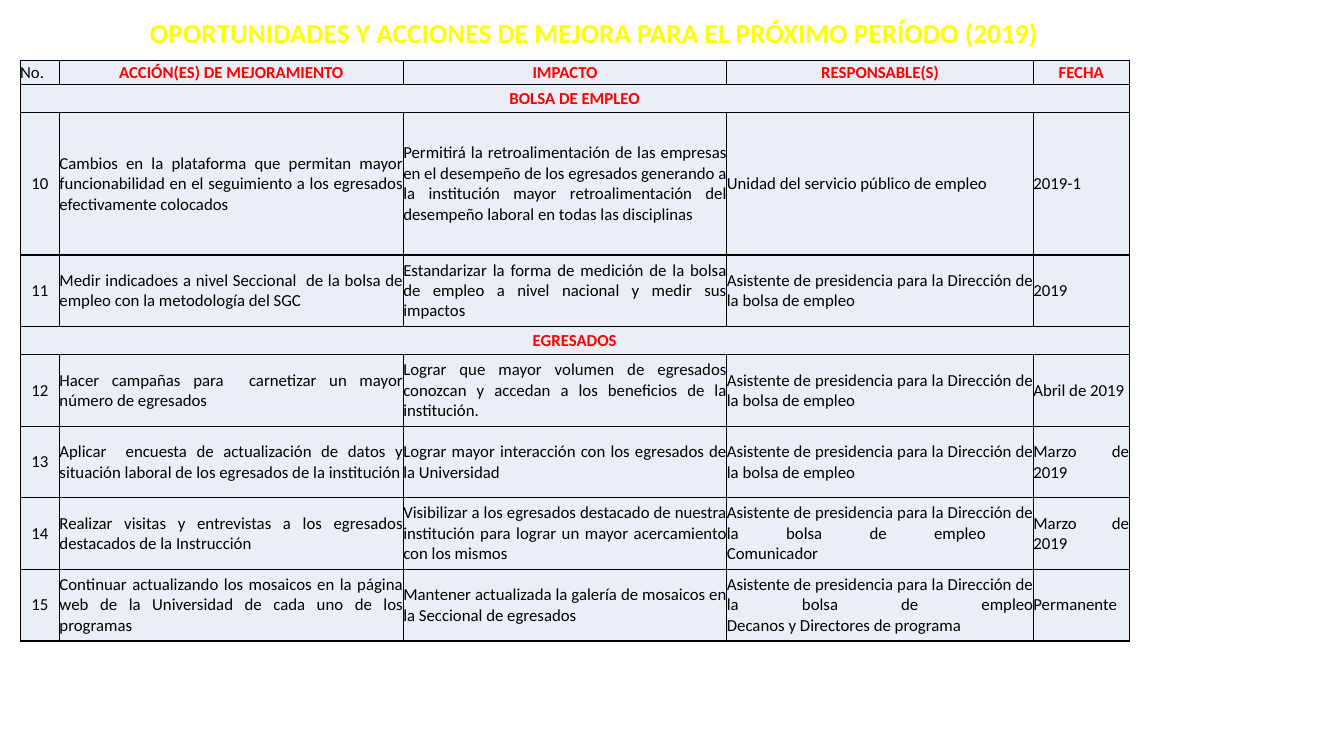
from copy import deepcopy
from dataclasses import dataclass

from lxml import etree
from pptx import Presentation
from pptx.dml.color import RGBColor
from pptx.enum.text import MSO_ANCHOR, MSO_AUTO_SIZE, PP_ALIGN
from pptx.oxml.ns import qn
from pptx.table import Table, _Cell
from pptx.text.text import _Paragraph
from pptx.util import Inches, Pt

CENTER = PP_ALIGN.CENTER
JUSTIFY = PP_ALIGN.JUSTIFY
MIDDLE = MSO_ANCHOR.MIDDLE
NO_AUTOFIT = MSO_AUTO_SIZE.NONE

COLORS = {
    "title": "FFFF00",
    "heading": "FF0000",
    "body": "000000",
    "cell": "EAEFF7",
    "border": "000000",
}
FORMATS = {
    "title": {"name": "Calibri", "size": Pt(19.5), "bold": True},
    "heading": {"name": "Calibri", "size": Pt(12), "bold": True},
    "body": {"name": "Calibri", "size": Pt(12), "bold": False},
}
CELL_LAYOUT = {
    "margin_left": 0,
    "margin_top": 0,
    "margin_right": 0,
    "margin_bottom": 0,
    "vertical_anchor": MIDDLE,
}
TITLE_PLACE = {
    "left": Inches(0.58),
    "top": Inches(0.05),
    "width": Inches(10.63),
    "height": Inches(0.55),
}
COLUMN_WIDTHS = [0.39, 3.41, 3.21, 3.04, 0.95]
HEADINGS = ["No.", "ACCIÓN(ES) DE MEJORAMIENTO", "IMPACTO", "RESPONSABLE(S)", "FECHA"]
HEADING_HEIGHT = 0.24
SECTION_HEIGHT = 0.28
ASSISTANT = "Asistente de presidencia para la Dirección de la bolsa de empleo"


@dataclass
class Action:
    number: int
    improvement: str
    impact: str
    responsible: str
    date: str
    height: float = 0.71

    def texts(self) -> list[str]:
        return [str(self.number), self.improvement, self.impact, self.responsible, self.date]


@dataclass
class Section:
    name: str
    actions: list[Action]


SECTIONS = [
    Section("BOLSA DE EMPLEO", [
        Action(
            10,
            "Cambios en la plataforma que permitan mayor funcionabilidad en el seguimiento "
            "a los egresados efectivamente colocados",
            "Permitirá la retroalimentación de las empresas en el desempeño de los egresados "
            "generando a la institución mayor retroalimentación del desempeño laboral en "
            "todas las disciplinas",
            "Unidad del servicio público de empleo",
            "2019-1",
            1.41,
        ),
        Action(
            11,
            "Medir indicadoes a nivel Seccional  de la bolsa de empleo con la metodología del SGC",
            "Estandarizar la forma de medición de la bolsa de empleo a nivel nacional y medir "
            "sus impactos",
            ASSISTANT,
            "2019",
        ),
    ]),
    Section("EGRESADOS", [
        Action(
            12,
            "Hacer campañas para  carnetizar un mayor número de egresados",
            "Lograr que mayor volumen de egresados conozcan y accedan a los beneficios de la "
            "institución.",
            ASSISTANT,
            "Abril de 2019",
        ),
        Action(
            13,
            "Aplicar  encuesta de actualización de datos y situación laboral de los egresados "
            "de la institución",
            "Lograr mayor interacción con los egresados de la Universidad",
            ASSISTANT,
            "Marzo de 2019",
        ),
        Action(
            14,
            "Realizar visitas y entrevistas a los egresados destacados de la Instrucción",
            "Visibilizar a los egresados destacado de nuestra institución para lograr un mayor "
            "acercamiento con los mismos",
            f"{ASSISTANT} \vComunicador",
            "Marzo de 2019",
        ),
        Action(
            15,
            "Continuar actualizando los mosaicos en la página web de la Universidad de cada "
            "uno de los programas",
            "Mantener actualizada la galería de mosaicos en la Seccional de egresados",
            f"{ASSISTANT}\vDecanos y Directores de programa",
            "Permanente",
        ),
    ]),
]


def write_text(paragraph: _Paragraph, text: str, style: str, alignment: PP_ALIGN) -> None:
    paragraph.text = text
    paragraph.alignment = alignment
    for run in paragraph.runs:
        for attribute, value in FORMATS[style].items():
            setattr(run.font, attribute, value)
        run.font.color.rgb = RGBColor.from_string(COLORS[style])
    for line_break in paragraph._p.findall(qn("a:br")):
        line_break.append(deepcopy(paragraph.runs[0]._r.find(qn("a:rPr"))))


def add_borders(cell: _Cell) -> None:
    properties = cell._tc.get_or_add_tcPr()
    for position, side in enumerate(("a:lnL", "a:lnR", "a:lnT", "a:lnB")):
        line = etree.Element(qn(side), w=str(Pt(1)))
        fill = etree.SubElement(line, qn("a:solidFill"))
        etree.SubElement(fill, qn("a:srgbClr"), val=COLORS["border"])
        properties.insert(position, line)


def format_cell(cell: _Cell) -> None:
    for attribute, value in CELL_LAYOUT.items():
        setattr(cell, attribute, value)
    cell.fill.solid()
    cell.fill.fore_color.rgb = RGBColor.from_string(COLORS["cell"])
    add_borders(cell)


def write_cell(cell: _Cell, text: str, style: str, alignment: PP_ALIGN) -> None:
    write_text(cell.text_frame.paragraphs[0], text, style, alignment)


def fill_table(table: Table) -> None:
    table.first_row = False
    table.horz_banding = False
    for column, width in zip(table.columns, COLUMN_WIDTHS):
        column.width = Inches(width)
    for cell in table.iter_cells():
        format_cell(cell)

    table.rows[0].height = Inches(HEADING_HEIGHT)
    for column, heading in enumerate(HEADINGS):
        style, alignment = ("heading", CENTER) if column else ("body", JUSTIFY)
        write_cell(table.cell(0, column), heading, style, alignment)

    row = 1
    for section in SECTIONS:
        table.rows[row].height = Inches(SECTION_HEIGHT)
        table.cell(row, 0).merge(table.cell(row, len(HEADINGS) - 1))
        write_cell(table.cell(row, 0), section.name, "heading", CENTER)
        for row, action in enumerate(section.actions, row + 1):
            table.rows[row].height = Inches(action.height)
            for column, text in enumerate(action.texts()):
                write_cell(table.cell(row, column), text, "body", JUSTIFY if column else CENTER)
        row += 1


def main() -> None:
    presentation = Presentation()
    presentation.slide_width = Inches(13.33)
    presentation.slide_height = Inches(7.5)
    slide = presentation.slides.add_slide(presentation.slide_layouts[5])

    title = slide.shapes.title
    for attribute, value in TITLE_PLACE.items():
        setattr(title, attribute, value)
    title.text_frame.auto_size = NO_AUTOFIT
    title.text_frame.vertical_anchor = MIDDLE
    write_text(
        title.text_frame.paragraphs[0],
        "OPORTUNIDADES Y ACCIONES DE MEJORA PARA EL PRÓXIMO PERÍODO (2019)",
        "title",
        CENTER,
    )

    row_count = 1 + sum(1 + len(section.actions) for section in SECTIONS)
    frame = slide.shapes.add_table(
        row_count, len(HEADINGS), Inches(0.2), Inches(0.6), Inches(11), Inches(5.76)
    )
    fill_table(frame.table)
    presentation.save("out.pptx")


if __name__ == "__main__":
    main()
